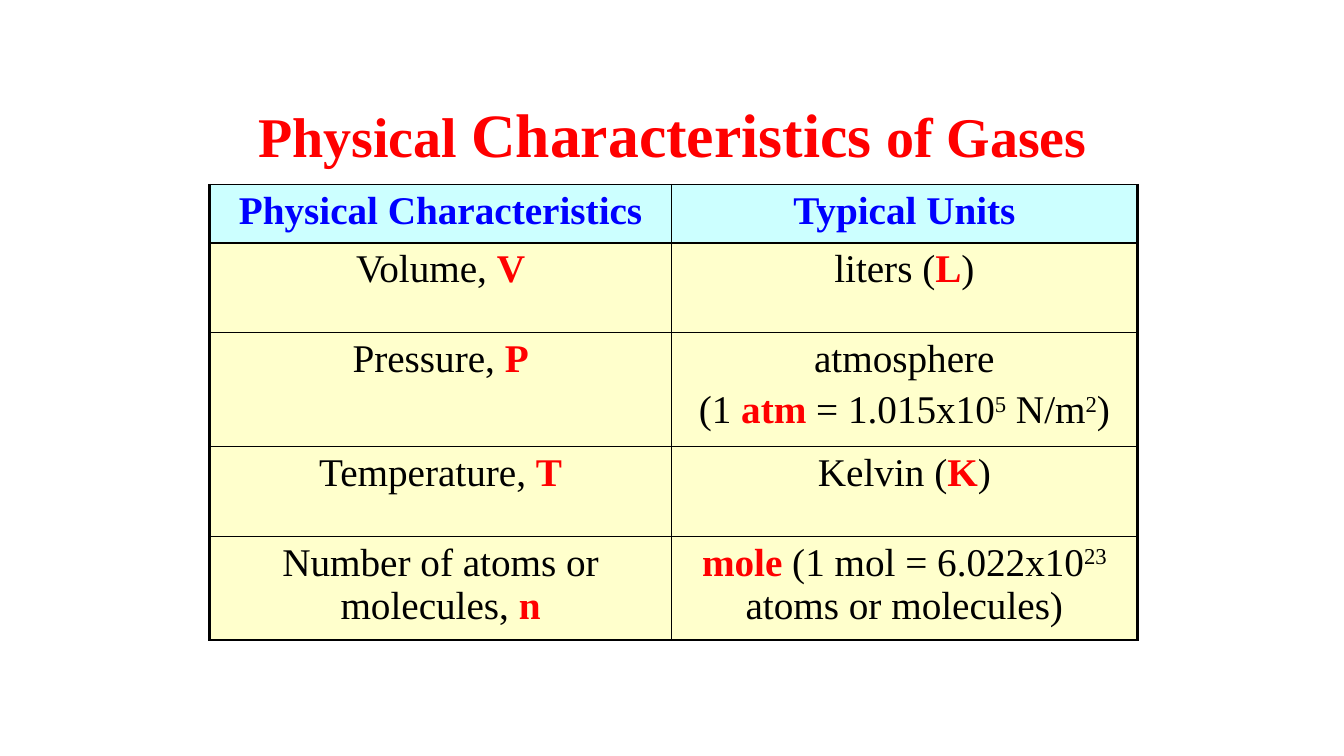
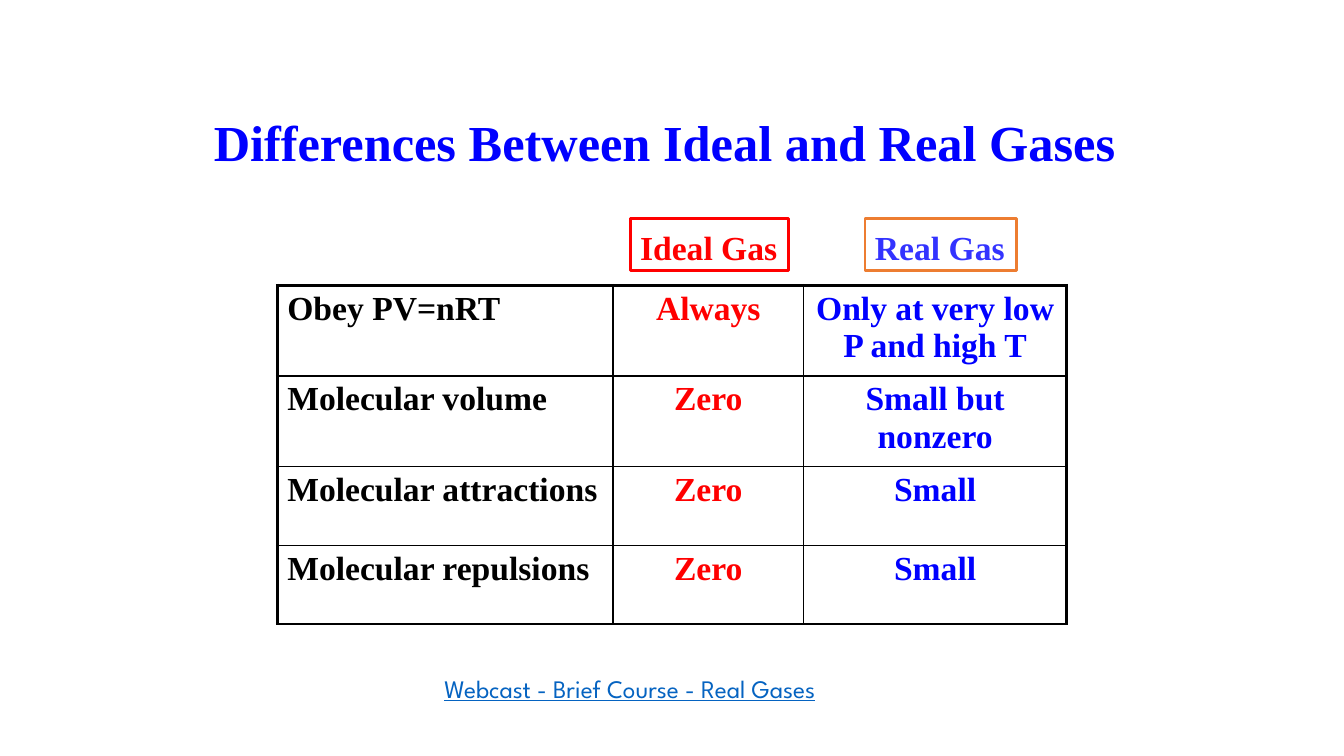
from dataclasses import dataclass, replace

from lxml import etree
from pptx import Presentation
from pptx.dml.color import RGBColor
from pptx.enum import shapes, text
from pptx.oxml.ns import qn
from pptx.util import Inches, Pt


@dataclass(frozen=True)
class Theme:
    serif: str = "Times New Roman"
    sans: str = "League Spartan"
    black: str = "000000"
    red: str = "FF0000"
    blue: str = "0000FF"
    violet: str = "3333FF"
    orange: str = "ED7D31"
    link: str = "0563C1"
    head_fill: str = "CCFFFF"
    body_fill: str = "FFFFCC"
    title_big: int = 44
    title: int = 40
    title_small: int = 36
    units: int = 28
    compare: int = 24
    link_size: int = 18
    thin: float = 1
    thick: float = 2.25
    outline: float = 2


T = Theme()


@dataclass(frozen=True)
class Style:
    size: int
    color: str = T.black
    bold: bool = True
    font: str = T.serif
    underline: bool = False
    superscript: bool = False


PLAIN = Style(T.units, bold=False)
SUPER = replace(PLAIN, superscript=True)
SYMBOL = Style(T.units, T.red)
HEAD = Style(T.units, T.blue)
LEFT, CENTER = text.PP_ALIGN.LEFT, text.PP_ALIGN.CENTER


def add_runs(p, runs, align=LEFT):
    p.alignment = align
    for words, style in runs:
        r = p.add_run()
        r.text = words
        f = r.font
        f.name, f.size, f.bold = style.font, Pt(style.size), style.bold
        f.color.rgb = RGBColor.from_string(style.color)
        if style.underline:
            f.underline = True
        if style.superscript:
            r._r.get_or_add_rPr().set("baseline", "30000")


def place(sp, left, top, width, height):
    sp.left, sp.top = Inches(left), Inches(top)
    sp.width, sp.height = Inches(width), Inches(height)


def add_titled_slide(prs, box, runs, align=LEFT):
    s = prs.slides.add_slide(prs.slide_layouts[5])
    place(s.shapes.title, *box)
    tf = s.shapes.title.text_frame
    tf.word_wrap = align == CENTER
    tf.auto_size = text.MSO_AUTO_SIZE.NONE
    tf.vertical_anchor = text.MSO_ANCHOR.TOP
    add_runs(tf.paragraphs[0], runs, align)
    return s


def add_label(s, left, width, words, color, line):
    sp = s.shapes.add_shape(shapes.MSO_SHAPE.RECTANGLE, Inches(left), Inches(2.17),
                            Inches(width), Inches(0.51))
    sp.shadow.inherit = False
    sp.fill.background()
    sp.line.color.rgb = RGBColor.from_string(line)
    sp.line.width = Pt(T.outline)
    tf = sp.text_frame
    tf.word_wrap = False
    tf.vertical_anchor = text.MSO_ANCHOR.TOP
    tf.margin_top = Inches(0.08)
    add_runs(tf.paragraphs[0], [(words, Style(T.compare, color))])


def add_link_text(s, words):
    sp = s.shapes.add_textbox(Inches(4.31), Inches(6.63), Inches(4.72), Inches(0.71))
    sp.text_frame.word_wrap = False
    style = Style(T.link_size, T.link, False, T.sans, underline=True)
    add_runs(sp.text_frame.paragraphs[0], [(words, style)])


def set_borders(cell, widths):
    """Draw the left, right, top and bottom borders, given in points."""
    tcPr = cell._tc.get_or_add_tcPr()
    for i, (side, width) in enumerate(zip("LRTB", widths)):
        ln = etree.Element(qn(f"a:ln{side}"), w=str(int(Pt(width))))
        fill = etree.SubElement(ln, qn("a:solidFill"))
        etree.SubElement(fill, qn("a:srgbClr"), val=T.black)
        tcPr.insert(i, ln)


def add_grid(s, left, top, widths, heights, rows, fills, edge, aligns):
    """Add a table; each cell is a list of paragraphs, each a list of runs.

    The sides have thick borders, the top and bottom ones are `edge` points.
    """
    table = s.shapes.add_table(len(heights), len(widths), Inches(left), Inches(top),
                               Inches(sum(widths)), Inches(sum(heights))).table
    table.first_row = table.horz_banding = False
    for col, width in zip(table.columns, widths):
        col.width = Inches(width)
    for row, height in zip(table.rows, heights):
        row.height = Inches(height)
    last_row, last_col = len(heights) - 1, len(widths) - 1
    for i, row in enumerate(rows):
        for j, paragraphs in enumerate(row):
            cell = table.cell(i, j)
            if fills:
                cell.fill.solid()
                cell.fill.fore_color.rgb = RGBColor.from_string(fills[i])
            else:
                cell.fill.background()
            set_borders(cell, (T.thick if j == 0 else T.thin,
                               T.thick if j == last_col else T.thin,
                               edge if i == 0 else T.thin,
                               edge if i == last_row else T.thin))
            tf = cell.text_frame
            for k, runs in enumerate(paragraphs):
                p = tf.add_paragraph() if k else tf.paragraphs[0]
                if k:
                    p.space_before = Pt(0.2 * runs[0][1].size)
                add_runs(p, runs, aligns[j])


def characteristics_slide(prs):
    title = Style(T.title, T.red)
    s = add_titled_slide(prs, (2.17, 0.9, 9, 0.83), [
        ("Physical ", title),
        ("Characteristics", replace(title, size=T.title_big)),
        (" of Gases", title)], CENTER)

    def quantity(name, symbol):
        return [[(name, PLAIN), (symbol, SYMBOL)]]

    def unit(name, symbol):
        return [[(f"{name} (", PLAIN), (symbol, SYMBOL), (")", PLAIN)]]

    atmosphere = [[("atmosphere", PLAIN)],
                  [("(1 ", PLAIN), ("atm", SYMBOL), (" = 1.015x10", PLAIN), ("5", SUPER),
                   (" N/m", PLAIN), ("2", SUPER), (")", PLAIN)]]
    mole = [[("mole ", SYMBOL), ("(1 mol = 6.022x10", PLAIN), ("23", SUPER),
             (" atoms or molecules)", PLAIN)]]
    rows = [
        ([[("Physical Characteristics", HEAD)]], [[("Typical Units", HEAD)]]),
        (quantity("Volume, ", "V"), unit("liters", "L")),
        (quantity("Pressure, ", "P"), atmosphere),
        (quantity("Temperature, ", "T"), unit("Kelvin", "K")),
        (quantity("Number of atoms or molecules, ", "n"), mole),
    ]
    add_grid(s, 2.08, 1.83, (4.58, 4.62), (0.58, 0.89, 1.13, 0.89, 1.03), rows,
             [T.head_fill] + [T.body_fill] * 4, T.thin, (CENTER, CENTER))


def differences_slide(prs):
    s = add_titled_slide(prs, (2.02, 1.05, 9.28, 0.7), [
        ("Differences Between Ideal and Real Gases", Style(T.title_small, T.blue))])
    content = [
        ("Obey PV=nRT", "Always", "Only at very low P and high T"),
        ("Molecular volume", "Zero", "Small but nonzero"),
        ("Molecular attractions", "Zero", "Small"),
        ("Molecular repulsions", "Zero", "Small"),
    ]
    styles = [Style(T.compare, color) for color in (T.black, T.red, T.blue)]
    rows = [[[[pair]] for pair in zip(row, styles)] for row in content]
    add_grid(s, 2.75, 2.83, (3.33, 1.89, 2.61), (0.9, 0.9, 0.78, 0.78), rows,
             None, T.thick, (LEFT, CENTER, CENTER))
    add_label(s, 6.25, 1.57, "Ideal Gas", T.red, T.red)
    add_label(s, 8.58, 1.5, "Real Gas", T.violet, T.orange)
    add_link_text(s, "Webcast - Brief Course - Real Gases")


def main():
    prs = Presentation()
    prs.slide_width, prs.slide_height = Inches(13.33), Inches(7.5)
    characteristics_slide(prs)
    differences_slide(prs)
    prs.save("out.pptx")


if __name__ == "__main__":
    main()
